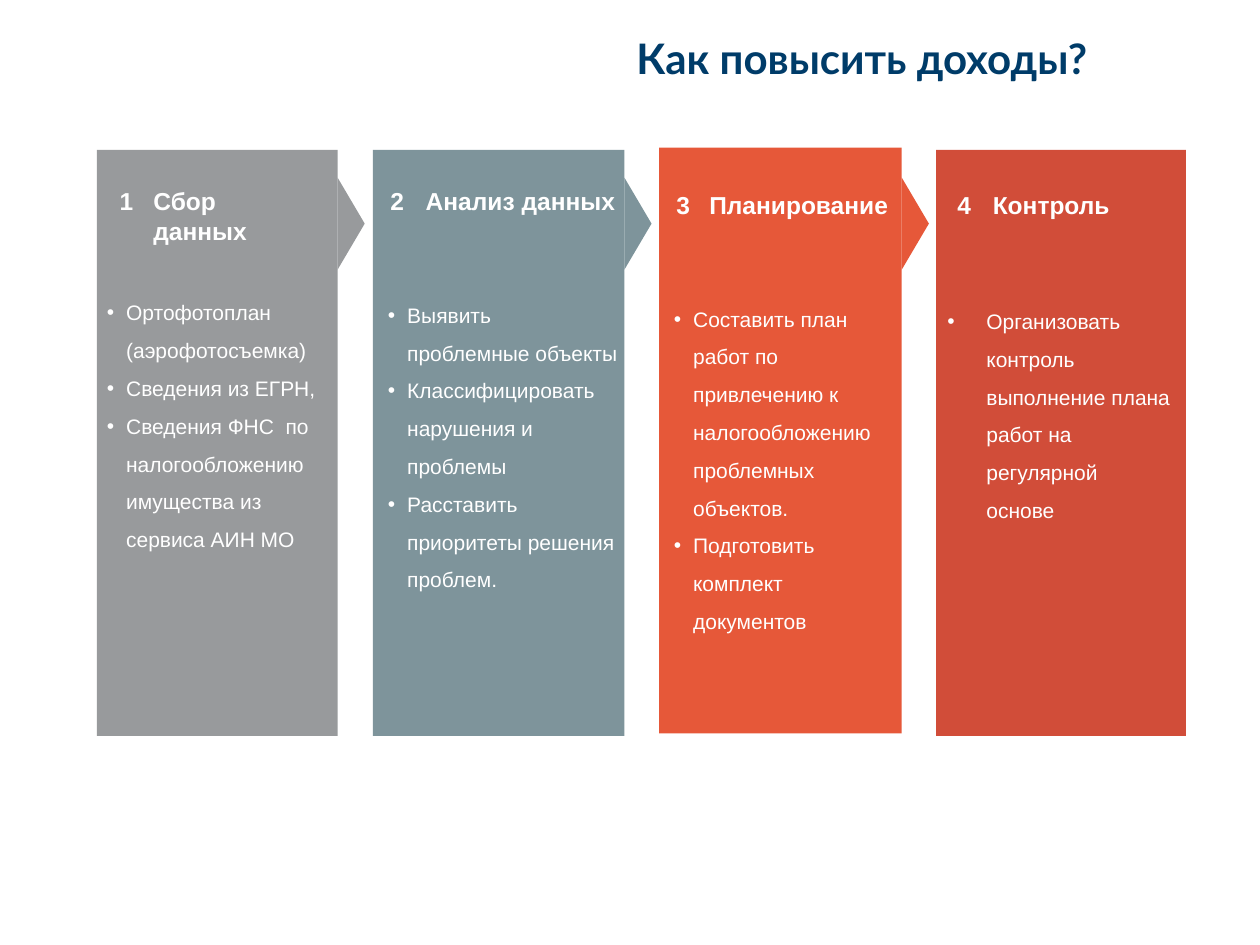
from dataclasses import dataclass

from lxml import etree
from pptx import Presentation
from pptx import util as u
from pptx.dml.color import RGBColor
from pptx.enum import shapes, text
from pptx.oxml import ns

COLORS = {
    "title": "003C69",
    "text": "FFFFFF",
    "collect": "989A9C",
    "analyse": "7E949B",
    "plan": "E65839",
    "control": "D14D39",
}
ARROW_BASE, ARROW_DEPTH, ARROW_CENTER = 52.6, 15.5, 127.8
PANEL_HEIGHT = 334.8
HEADING_HEIGHT = 24.5

TITLE_FONT = {"name": "Lato", "size": u.Pt(24), "bold": True}
HEADING_FONT = {"name": "Arial", "size": u.Pt(14), "bold": True}
BODY_FONT = {"name": "Arial", "size": u.Pt(12), "bold": False}


@dataclass
class Box:
    left: float
    top: float
    width: float
    height: float

    def points(self) -> list:
        return [u.Pt(v) for v in (self.left, self.top, self.width, self.height)]


@dataclass
class Stage:
    color: str
    panel: Box
    number_left: float
    heading: str
    heading_box: Box
    body_box: Box
    bullets: list[str]
    indent: float = 11
    arrow: bool = True


STAGES = [
    Stage("collect", Box(55.4, 85.7, 137.5, PANEL_HEIGHT), 61.2,
          "Сбор данных", Box(80.6, 103, 98.6, 41),
          Box(54, 160.6, 136.1, 159.8),
          ["Ортофотоплан (аэрофотосъемка)",
           "Сведения из ЕГРН,",
           "Сведения ФНС  по налогообложению имущества из сервиса АИН МО"]),
    Stage("analyse", Box(213.1, 85.7, 143.7, PANEL_HEIGHT), 216,
          "Анализ данных", Box(236.2, 103, 129.6, HEADING_HEIGHT),
          Box(214.6, 162, 145.4, 203.8),
          ["Выявить проблемные объекты",
           "Классифицировать нарушения и проблемы",
           "Расставить приоритеты решения проблем."]),
    Stage("plan", Box(376.6, 84.3, 138.7, PANEL_HEIGHT), 379.4,
          "Планирование", Box(398.2, 105.1, 121, HEADING_HEIGHT),
          Box(378, 164.2, 136.1, 222.5),
          ["Составить план работ по привлечению к налогообложению "
           "проблемных объектов.",
           "Подготовить комплект документов"]),
    Stage("control", Box(535, 85.7, 142.7, PANEL_HEIGHT), 540,
          "Контроль", Box(560.2, 105.1, 95, HEADING_HEIGHT),
          Box(534.3, 165.6, 141.8, 138.2),
          ["Организовать контроль выполнение плана работ на регулярной основе"],
          indent=22.3, arrow=False),
]


def set_all(target, values: dict) -> None:
    for name, value in values.items():
        setattr(target, name, value)


def add_filled(slide, kind, box: Box, color: str, rotation: float = 0):
    shape = slide.shapes.add_shape(kind, *box.points())
    shape.rotation = rotation
    shape.shadow.inherit = False
    shape.fill.solid()
    shape.fill.fore_color.rgb = RGBColor.from_string(COLORS[color])
    shape.line.fill.background()
    return shape


def add_bullet(paragraph, indent: float) -> None:
    properties = paragraph._p.get_or_add_pPr()
    properties.set("marL", str(u.Pt(indent)))
    properties.set("indent", str(-u.Pt(indent)))
    font = etree.SubElement(properties, ns.qn("a:buFont"))
    font.set("typeface", "Arial")
    etree.SubElement(properties, ns.qn("a:buChar")).set("char", "•")


def add_text(slide, box: Box, lines: list[str], font: dict,
             color: str = "text", indent: float = 0, **paragraph_format):
    shape = slide.shapes.add_textbox(*box.points())
    frame = shape.text_frame
    set_all(frame, {"word_wrap": True,
                    "auto_size": text.MSO_AUTO_SIZE.SHAPE_TO_FIT_TEXT})
    for index, line in enumerate(lines):
        paragraph = frame.add_paragraph() if index else frame.paragraphs[0]
        if indent:
            add_bullet(paragraph, indent)
        set_all(paragraph, paragraph_format)
        run = paragraph.add_run()
        run.text = line
        set_all(run.font, font)
        run.font.color.rgb = RGBColor.from_string(COLORS[color])
    return shape


def draw_panel(slide, stage: Stage) -> None:
    panel = stage.panel
    add_filled(slide, shapes.MSO_SHAPE.RECTANGLE, panel, stage.color)
    if stage.arrow:
        # The triangle turns about its centre, so its base meets the panel edge
        center = panel.left + panel.width + ARROW_DEPTH / 2
        arrow = Box(center - ARROW_BASE / 2, ARROW_CENTER - ARROW_DEPTH / 2,
                    ARROW_BASE, ARROW_DEPTH)
        add_filled(slide, shapes.MSO_SHAPE.ISOSCELES_TRIANGLE, arrow,
                   stage.color, rotation=90)


def draw_stage_text(slide, number: int, stage: Stage) -> None:
    number_box = Box(stage.number_left, stage.heading_box.top, 29.5, HEADING_HEIGHT)
    add_text(slide, number_box, [str(number)], HEADING_FONT)
    add_text(slide, stage.heading_box, [stage.heading], HEADING_FONT)
    add_text(slide, stage.body_box, stage.bullets, BODY_FONT,
             indent=stage.indent, line_spacing=1.5)


def main() -> None:
    presentation = Presentation()
    set_all(presentation, {"slide_width": u.Pt(720), "slide_height": u.Pt(540)})
    slide = presentation.slides.add_slide(presentation.slide_layouts[6])

    # Title
    title = add_text(slide, Box(127.4, 15.1, 497.5, 36.7), ["Как повысить доходы?"],
                     TITLE_FONT, "title", alignment=text.PP_ALIGN.RIGHT)
    set_all(title.text_frame, {f"margin_{side}": u.Pt(3.6)
                               for side in ("left", "top", "right", "bottom")})

    # Panels, last stage at the back
    for stage in reversed(STAGES):
        draw_panel(slide, stage)

    # Numbers, headings and bullet lists
    for number, stage in enumerate(STAGES, start=1):
        draw_stage_text(slide, number, stage)

    presentation.save("out.pptx")


if __name__ == "__main__":
    main()
